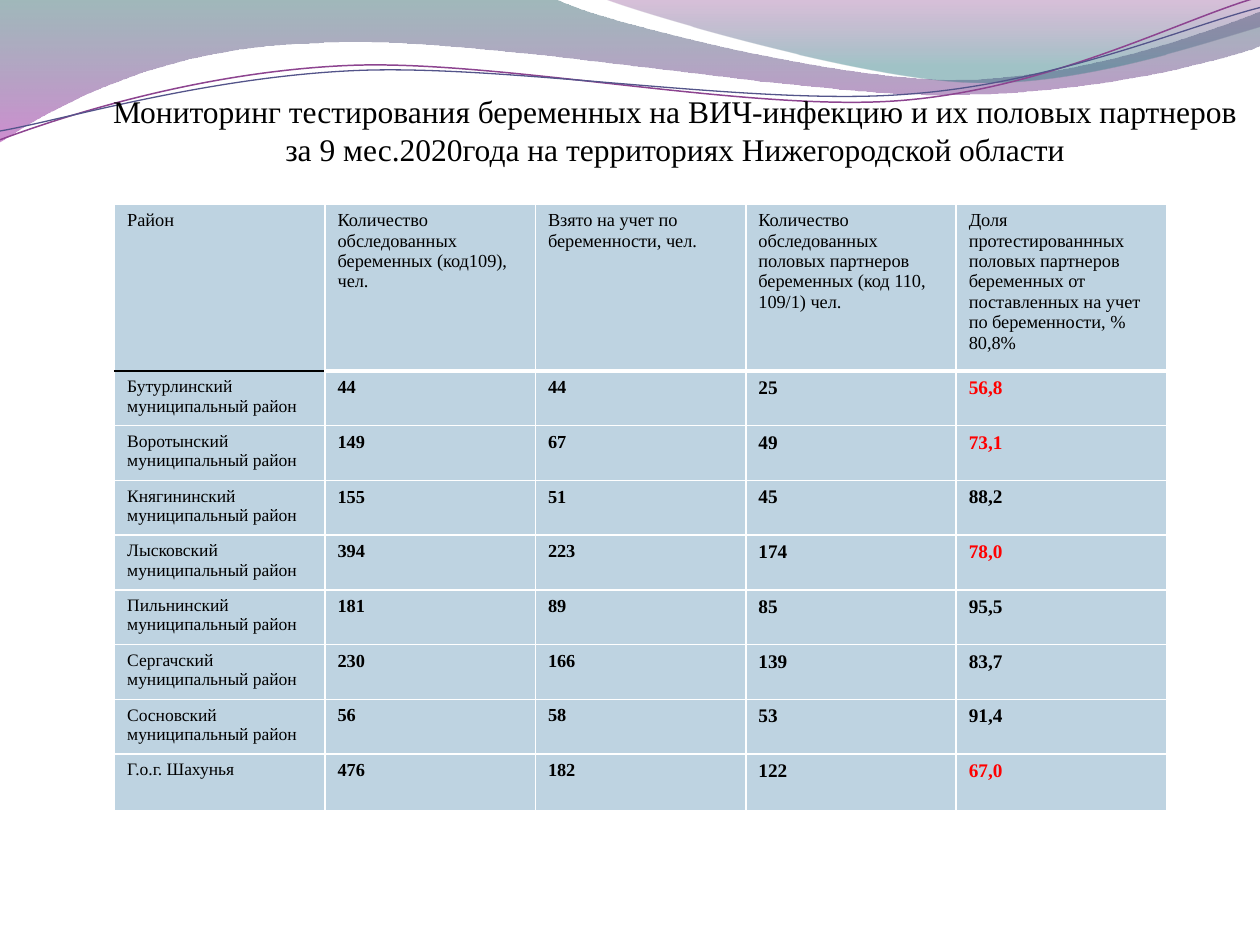
from dataclasses import dataclass
from typing import NamedTuple

from lxml import etree
from pptx import Presentation
from pptx.dml.color import RGBColor
from pptx.enum.text import MSO_ANCHOR, PP_ALIGN
from pptx.oxml.ns import qn
from pptx.util import Inches, Pt

CENTER = PP_ALIGN.CENTER
BOTTOM = MSO_ANCHOR.BOTTOM
REGION_SHARE = 80.8


@dataclass(frozen=True)
class Theme:
    font: str = "Times New Roman"
    title_size: float = 18
    header_size: float = 10.5
    district_size: float = 10
    count_size: float = 10.5
    partner_size: float = 11
    ink: str = "000000"
    alert: str = "FF0000"
    cell: str = "BED3E1"
    grid: str = "FFFFFF"
    purple: str = "8D4490"
    indigo: str = "53548A"


THEME = Theme()


class Stop(NamedTuple):
    position: float
    color: str
    opacity: int


class Wave(NamedTuple):
    start: tuple
    segments: list
    stops: tuple


class Strand(NamedTuple):
    start: tuple
    segments: list
    color: str
    width: float


class District(NamedTuple):
    name: str
    tested: str
    registered: str
    partners: str
    share: str


WAVES = [
    Wave((0, 0), [
        (4.4, -0.01),
        (4.76, 0.17, 6.64, 0.63, 7.58, 0.63),
        (8.53, 0.63, 9.58, 0.26, 10, 0.09),
        (10.01, 0.36),
        (9.83, 0.44, 8.7, 0.76, 7.46, 0.75),
        (6.22, 0.75, 3.82, 0.28, 2.57, 0.34),
        (1.29, 0.36, 0.46, 0.83, -0.01, 1.13),
    ], (Stop(0, "2D6368", 45), Stop(1, "A530A9", 55))),
    Wave((4.79, -0.01), [
        (5.09, 0.11, 6.82, 0.62, 7.69, 0.65),
        (8.56, 0.69, 9.61, 0.32, 10, 0.21),
        (10, 0),
    ], (Stop(0, "7F2F82", 30), Stop(0.8, "2F7B82", 45))),
]

STRANDS = [
    Strand((0, 1.11), [
        (0.48, 0.93, 1.58, 0.57, 2.77, 0.52),
        (3.95, 0.47, 5.93, 0.89, 7.13, 0.8),
        (8.33, 0.71, 9.38, 0.15, 9.98, -0.02),
    ], THEME.purple, 0.85),
    Strand((0, 1.04), [
        (0.47, 0.96, 1.64, 0.61, 2.83, 0.56),
        (4.03, 0.51, 5.97, 0.84, 7.17, 0.75),
        (8.36, 0.67, 9.41, 0.21, 10, 0.06),
    ], THEME.indigo, 0.75),
]

TITLE = ("Мониторинг тестирования беременных на ВИЧ-инфекцию и их половых партнеров "
         "за 9 мес.2020года на территориях Нижегородской области")

HEADERS = [
    "Район",
    "Количество обследованных беременных (код109), чел.",
    "Взято на учет по беременности, чел.",
    "Количество обследованных половых партнеров беременных (код 110, 109/1) чел.",
    "Доля протестированнных половых партнеров беременных от поставленных на учет "
    "по беременности, %\n80,8%",
]

DISTRICTS = [
    District("Бутурлинский муниципальный район", "44", "44", "25", "56,8"),
    District("Воротынский муниципальный район", "149", "67", "49", "73,1"),
    District("Княгининский муниципальный район", "155", "51", "45", "88,2"),
    District("Лысковский муниципальный район", "394", "223", "174", "78,0"),
    District("Пильнинский муниципальный район", "181", "89", "85", "95,5"),
    District("Сергачский муниципальный район", "230", "166", "139", "83,7"),
    District("Сосновский муниципальный район", "56", "58", "53", "91,4"),
    District("Г.о.г. Шахунья", "476", "182", "122", "67,0"),
]

ROW_HEIGHTS = [0.79, 0.39, 0.39, 0.29, 0.39, 0.39, 0.39, 0.39, 0.45]
COLUMN_SIZES = [THEME.district_size, THEME.count_size, THEME.count_size,
                THEME.partner_size, THEME.partner_size]


def rgb(color: str) -> RGBColor:
    return RGBColor.from_string(color)


def add_outline(slide, start: tuple, segments: list, closed: bool):
    builder = slide.shapes.build_freeform(Inches(start[0]), Inches(start[1]))
    builder.add_line_segments([(Inches(s[-2]), Inches(s[-1])) for s in segments], close=closed)
    outline = builder.convert_to_shape()
    outline.shadow.inherit = False
    steps = list(outline.element.spPr.iter(qn("a:lnTo")))
    for step, segment in zip(steps, segments):
        if len(segment) == 6:
            curve = etree.Element(qn("a:cubicBezTo"))
            for x, y in zip(segment[::2], segment[1::2]):
                etree.SubElement(curve, qn("a:pt"), x=str(Inches(x) - outline.left),
                                 y=str(Inches(y) - outline.top))
            step.getparent().replace(step, curve)
    return outline


def draw_wave(slide, wave: Wave) -> None:
    band = add_outline(slide, wave.start, wave.segments, True)
    band.line.fill.background()
    band.fill.gradient()
    band.fill.gradient_angle = 270
    for gradient_stop, stop in zip(band.fill.gradient_stops, wave.stops):
        gradient_stop.position = stop.position
        gradient_stop.color.rgb = rgb(stop.color)
    for color, stop in zip(band.element.spPr.iter(qn("a:srgbClr")), wave.stops):
        etree.SubElement(color, qn("a:alpha"), val=str(stop.opacity * 1000))


def draw_strand(slide, strand: Strand) -> None:
    thread = add_outline(slide, strand.start, strand.segments, False)
    thread.fill.background()
    thread.line.color.rgb = rgb(strand.color)
    thread.line.width = Pt(strand.width)


def write_text(frame, text: str, size: float, color: str, bold: bool = False) -> None:
    frame.text = text
    font_format = {"name": THEME.font, "size": Pt(size), "bold": bold}
    for paragraph in frame.paragraphs:
        for run in paragraph.runs:
            for attribute, value in font_format.items():
                setattr(run.font, attribute, value)
            run.font.color.rgb = rgb(color)


def draw_title(slide) -> None:
    box = slide.shapes.add_textbox(Inches(0.86), Inches(0.7), Inches(9), Inches(0.63))
    frame = box.text_frame
    frame_format = {"word_wrap": True, "vertical_anchor": BOTTOM, "margin_left": 0,
                    "margin_top": Inches(0.05), "margin_right": 0, "margin_bottom": 0}
    for attribute, value in frame_format.items():
        setattr(frame, attribute, value)
    write_text(frame, TITLE, THEME.title_size, THEME.ink)
    frame.paragraphs[0].alignment = CENTER


def set_border(cell, side: str, color: str, width: float) -> None:
    properties = cell._tc.get_or_add_tcPr()
    line = etree.SubElement(properties, qn(f"a:ln{side}"), w=str(Pt(width)))
    fill = etree.SubElement(line, qn("a:solidFill"))
    etree.SubElement(fill, qn("a:srgbClr"), val=color)


def style_cell(cell, row: int, column: int) -> None:
    if row == 0 or (row, column) == (1, 0):
        header_rule = (THEME.ink, 1) if column == 0 else (THEME.grid, 3)
        thin = (THEME.grid, 1)
        borders = {"L": thin, "R": thin, "T": header_rule if row == 1 else thin,
                   "B": header_rule if row == 0 else thin}
        for side, (color, width) in borders.items():
            set_border(cell, side, color, width)
    cell.fill.solid()
    cell.fill.fore_color.rgb = rgb(THEME.cell)


def draw_table(slide) -> None:
    rows = [HEADERS, *DISTRICTS]
    frame = slide.shapes.add_table(len(rows), len(HEADERS), Inches(0.91), Inches(1.62),
                                   Inches(8.35), Inches(4.81))
    table = frame.table
    for r, (height, values) in enumerate(zip(ROW_HEIGHTS, rows)):
        table.rows[r].height = Inches(height)
        for c, value in enumerate(values):
            cell = table.cell(r, c)
            style_cell(cell, r, c)
            size = COLUMN_SIZES[c] if r else THEME.header_size
            is_share = r > 0 and c == len(HEADERS) - 1
            low = is_share and float(value.replace(",", ".")) < REGION_SHARE
            write_text(cell.text_frame, value, size, THEME.alert if low else THEME.ink,
                       r > 0 and c > 0)
    frame.height = Inches(4.81)


def main() -> None:
    deck = Presentation()
    deck.slide_width, deck.slide_height = Inches(10), Inches(7.5)
    slide = deck.slides.add_slide(deck.slide_layouts[6])
    for wave in WAVES:
        draw_wave(slide, wave)
    for strand in STRANDS:
        draw_strand(slide, strand)
    draw_title(slide)
    draw_table(slide)
    deck.save("out.pptx")


if __name__ == "__main__":
    main()
